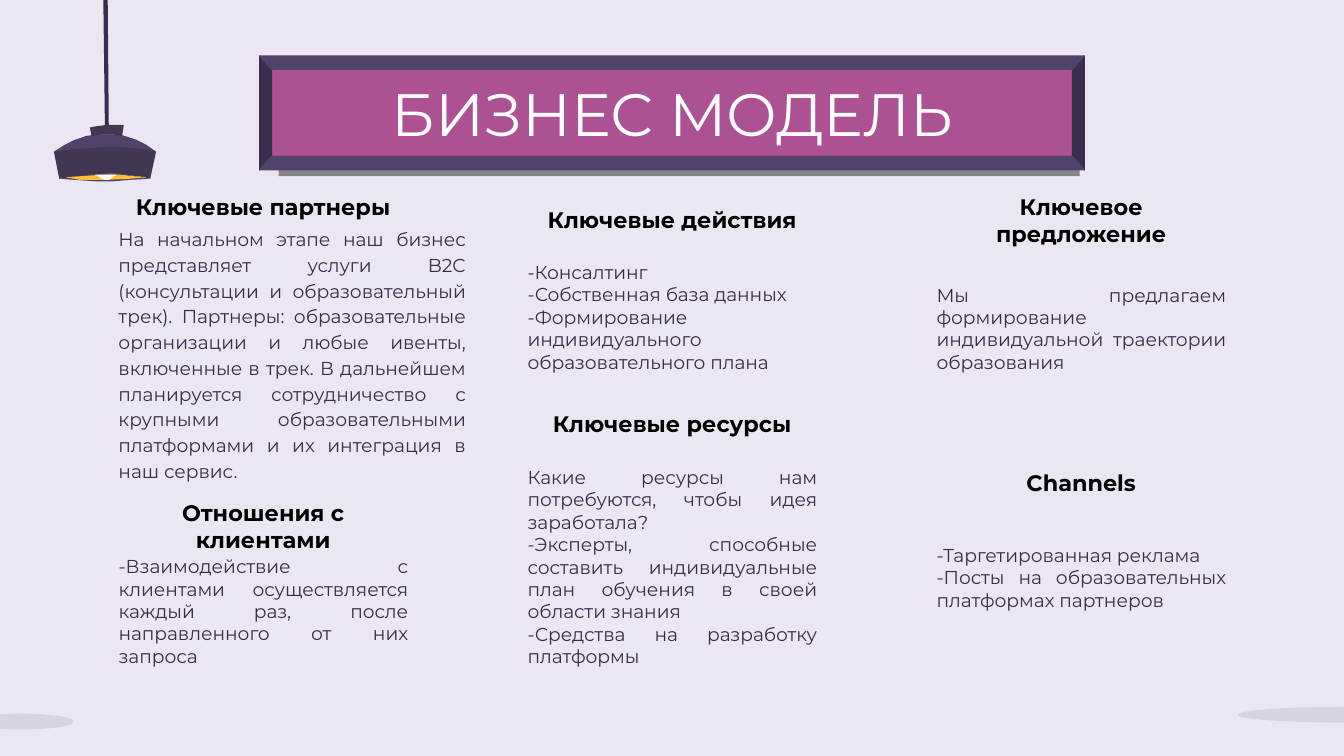
"""Build the business model slide."""
from lxml.etree import SubElement as Sub
from pptx import Presentation as Deck
from pptx.dml.color import RGBColor as Rgb
from pptx.enum.shapes import MSO_SHAPE as Kind
from pptx.enum.text import MSO_ANCHOR as Anchor, MSO_AUTO_SIZE as Fit, PP_ALIGN as Align
from pptx.oxml.ns import qn
from pptx.util import Cm, Pt

PALE = Rgb(0xEB, 0xE6, 0xF1)
PINK = Rgb(0xAC, 0x51, 0x91)
PLUM = Rgb(0x50, 0x42, 0x68)
DARK = Rgb(0x38, 0x2D, 0x4B)
SHADE = Rgb(0x41, 0x37, 0x53)
GOLD = Rgb(0xFF, 0xBE, 0x34)
WHITE = Rgb(0xFF, 0xFF, 0xFF)
BLACK = Rgb(0, 0, 0)

LEFT, STEP, WIDE, HEAD = 1.99, 7.73, 5.97, 1.02

LAMP = [
    (SHADE, [(1.9, 2.54), (1.63, 2.57), (1.37, 2.67), (1.19, 2.77), (1.02, 2.87),
             (1.12, 3.38), (1.5, 3.33), (1.83, 3.3), (2.11, 3.28), (2.36, 3.3),
             (2.72, 3.35), (2.84, 3.38), (2.95, 2.87), (2.77, 2.74), (2.57, 2.64),
             (2.31, 2.57), (2.06, 2.54)]),
    (PLUM, [(1.98, 3.28), (1.68, 3.3), (1.32, 3.35), (1.12, 3.38), (1.4, 3.4),
            (1.83, 3.43), (2.13, 3.43), (2.46, 3.4), (2.84, 3.38), (2.57, 3.33),
            (2.26, 3.28)]),
    (GOLD, [(1.98, 3.3), (1.55, 3.33), (1.24, 3.35), (1.5, 3.4), (2.01, 3.4),
            (2.46, 3.38), (2.77, 3.35), (2.51, 3.33), (2.24, 3.3)]),
    (WHITE, [(1.8, 3.3), (1.88, 3.35), (1.98, 3.4), (2.06, 3.4), (2.13, 3.35),
             (2.21, 3.3)]),
    (PLUM, [(1.96, 2.54), (1.7, 2.57), (1.42, 2.64), (1.22, 2.74), (1.02, 2.87),
            (1.4, 2.82), (1.8, 2.79), (2.11, 2.77), (2.44, 2.79), (2.77, 2.82),
            (2.95, 2.87), (2.79, 2.77), (2.51, 2.62), (2.26, 2.54)]),
    (SHADE, [(2.03, 2.36), (1.8, 2.39), (1.7, 2.41), (1.73, 2.57), (1.93, 2.54),
             (2.13, 2.54), (2.31, 2.57), (2.34, 2.36)]),
]

HEADS = [
    (0, 3.4, "Ключевые партнеры"),
    (0, 9.44, "Отношения с клиентами"),
    (1, 3.65, "Ключевые действия"),
    (1, 7.49, "Ключевые ресурсы"),
    (2, 3.65, "Ключевое предложение"),
    (2, 8.61, "Channels"),
]

LISTS = [
    (1, 4.91, WIDE, 2.16, 1, ["-Консалтинг", "-Собственная база данных",
                              "-Формирование индивидуального образовательного плана"]),
    (1, 9.44, WIDE, 2.54, 1, [
        "Какие ресурсы нам потребуются, чтобы идея заработала?",
        "-Эксперты, способные составить индивидуальные план обучения в своей области знания",
        "-Средства на разработку платформы"]),
    (2, 9.62, WIDE, 2.59, 1, ["-Таргетированная реклама",
                              "-Посты на образовательных платформах партнеров"]),
    (0, 10.47, WIDE, 2.16, 1, [
        "-Взаимодействие с клиентами осуществляется каждый раз, после направленного от них запроса"]),
    (0, 4.93, 7.06, 3.5, 1.15, [
        "На начальном этапе наш бизнес представляет услуги B2C (консультации и "
        "образовательный трек). Партнеры: образовательные организации и любые ивенты, "
        "включенные в трек. В дальнейшем планируется сотрудничество с крупными "
        "образовательными платформами и их интеграция в наш сервис."]),
    (2, 4.91, WIDE, 2.59, 1, [
        "Мы предлагаем формирование индивидуальной траектории образования"]),
]


def write(shape, lines, size=10, color=DARK, bold=False, align=Align.JUSTIFY, lead=1):
    """Fill a shape with formatted paragraphs."""
    frame = shape.text_frame
    frame.word_wrap = True
    frame.auto_size = Fit.NONE
    frame.vertical_anchor = Anchor.MIDDLE
    frame.margin_left = frame.margin_right = Cm(0.25)
    frame.margin_top = frame.margin_bottom = Cm(0.25)
    for num, line in enumerate(lines):
        para = frame.add_paragraph() if num else frame.paragraphs[0]
        props = para._p.get_or_add_pPr()
        props.set("marL", "0")
        props.set("indent", "0")
        Sub(props, qn("a:buNone"))
        para.alignment = align
        para.line_spacing = lead
        para.space_before = para.space_after = Pt(0)
        run = para.add_run()
        run.text = line
        font = run.font
        font.name, font.size, font.bold = "Montserrat", Pt(size), bold
        font.color.rgb = color


class Page:
    """Hold the style and the current slide."""

    def __init__(self, deck):
        """Add a slide and collect its placeholders."""
        self.slide = deck.slides.add_slide(deck.slide_layouts[4])
        self.shapes = self.slide.shapes
        self.spare = [item for item in self.slide.placeholders if item != self.shapes.title]
        fill = self.slide.background.fill
        fill.solid()
        fill.fore_color.rgb = PALE

    def paint(self, shape, fill, line=None, width=0.75):
        """Set the fill and line of a shape."""
        shape.shadow.inherit = False
        shape.fill.solid()
        shape.fill.fore_color.rgb = fill
        if line is None:
            shape.line.fill.background()
        else:
            shape.line.color.rgb = line
            shape.line.width = Pt(width)
        return shape

    def place(self, shape, *box):
        """Move and size a shape."""
        shape.left, shape.top, shape.width, shape.height = map(Cm, box)
        return shape

    def poly(self, dots, fill, line=None, width=0.75):
        """Draw a closed outline."""
        dots = [(round(x * 100), round(y * 100)) for x, y in dots]
        pen = self.shapes.build_freeform(*dots[0], scale=Cm(0.01))
        pen.add_line_segments(dots[1:], close=True)
        return self.paint(pen.convert_to_shape(), fill, line, width)

    def form(self, kind, box, fill):
        """Draw a preset shape."""
        return self.paint(self.shapes.add_shape(kind, *map(Cm, box)), fill)

    def spot(self, *box):
        """Draw a faint floor ellipse."""
        oval = self.form(Kind.OVAL, box, BLACK)
        tint = oval._element.spPr.find(qn("a:solidFill"))[0]
        Sub(tint, qn("a:alpha"), val="8000")

    def plate(self, left, top, right, low, rim_x, rim_y):
        """Draw the framed plate with its shadow."""
        out = [(left, top), (right, top), (right, low), (left, low)]
        x, y, end, base = left + rim_x, top + rim_y, right - rim_x, low - rim_y
        inn = [(x, y), (end, y), (end, base), (x, base)]
        rect = self.form(Kind.RECTANGLE, (x, y, end - x, base - y), PINK)
        effect = rect._element.spPr.find(qn("a:effectLst"))
        cast = Sub(effect, qn("a:outerShdw"), dist="142240", dir="4200000",
                   algn="bl", rotWithShape="0")
        Sub(Sub(cast, qn("a:srgbClr"), val="000000"), qn("a:alpha"), val="41000")
        for side in (1, 3, 0, 2):
            then = (side + 1) % 4
            tone = DARK if side % 2 else PLUM
            self.poly([out[side], out[then], inn[then], inn[side]], tone, tone)

    def title(self, text, *box):
        """Set the slide title above the plate."""
        item = self.place(self.shapes.title, *box)
        self.shapes._spTree.append(item._element)
        write(item, [text], size=32, color=WHITE, align=Align.CENTER)

    def head(self, col, top, text):
        """Add a block heading."""
        box = self.shapes.add_textbox(*map(Cm, (LEFT + col * STEP, top, WIDE, HEAD)))
        write(box, [text], size=12, color=BLACK, bold=True, align=Align.CENTER)

    def body(self, col, top, wide, high, lead, lines):
        """Add block text, in a placeholder while any is free."""
        box = LEFT + col * STEP, top, wide, high
        if self.spare:
            item = self.place(self.spare.pop(0), *box)
        else:
            item = self.shapes.add_textbox(*map(Cm, box))
        write(item, lines, lead=lead)


def main():
    """Build and save the deck."""
    deck = Deck()
    deck.slide_width, deck.slide_height = Cm(25.4), Cm(14.29)
    page = Page(deck)
    page.poly([(1.98, 0), (2.01, 2.36), (2.03, 2.36), (2.01, 0)], DARK, DARK, 1.5)
    for fill, dots in LAMP:
        page.poly(dots, fill)
    page.spot(-0.61, 13.49, 2.01, 0.3)
    page.spot(23.39, 13.36, 4.01, 0.3)
    page.plate(4.91, 1.06, 20.49, 3.21, 0.22, 0.25)
    page.title("БИЗНЕС МОДЕЛЬ", 2, 1.5, 21.41, 1.27)
    for item in HEADS:
        page.head(*item)
    for item in LISTS:
        page.body(*item)
    deck.save("out.pptx")


if __name__ == "__main__":
    main()
